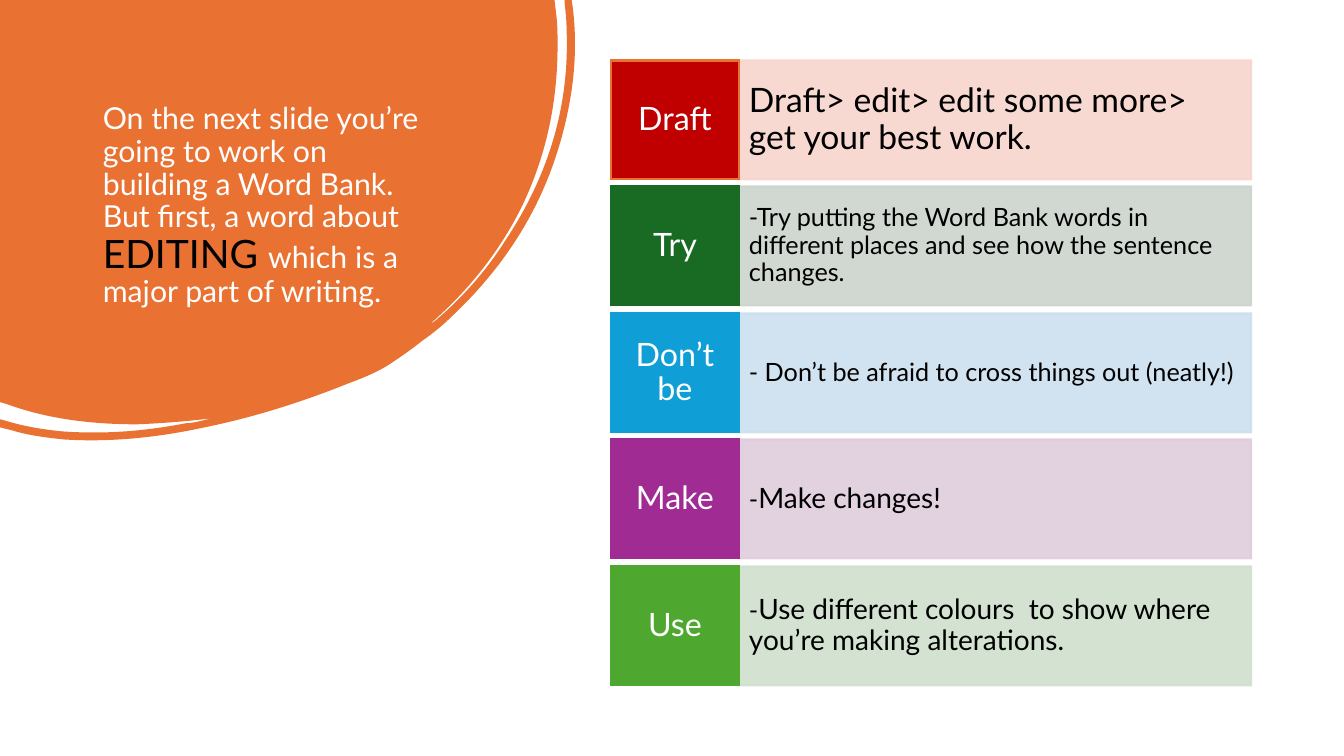
"""Builds the slide on editing: a curved title blob and five rows of advice."""
from lxml import etree
from pptx import Presentation
from pptx.dml.color import RGBColor
from pptx.enum.shapes import MSO_SHAPE
from pptx.enum.text import MSO_ANCHOR, MSO_AUTO_SIZE, PP_ALIGN
from pptx.oxml.ns import qn
from pptx.util import Pt

RECT = MSO_SHAPE.RECTANGLE
TOP, MIDDLE = MSO_ANCHOR.TOP, MSO_ANCHOR.MIDDLE
LEFT, CENTER = PP_ALIGN.LEFT, PP_ALIGN.CENTER
NO_FIT = MSO_AUTO_SIZE.NONE
PX = 9144
FONT = "Lato"

WHITE = RGBColor(255, 255, 255)
BLACK = RGBColor(0, 0, 0)
ORANGE = RGBColor(0xE9, 0x71, 0x32)
RED = RGBColor(0xC0, 0, 0)
ROSE = RGBColor(0xF7, 0xD5, 0xCE)
GREEN = RGBColor(0x19, 0x6B, 0x24)
SAGE = RGBColor(0xCC, 0xD4, 0xCD)
BLUE = RGBColor(0x0F, 0x9E, 0xD5)
SKY = RGBColor(0xCC, 0xDF, 0xEF)
PURPLE = RGBColor(0xA0, 0x2B, 0x93)
MAUVE = RGBColor(0xDF, 0xCD, 0xDC)
LIME = RGBColor(0x4E, 0xA7, 0x2E)
MINT = RGBColor(0xD0, 0xE1, 0xCD)

TITLE = [
    ("On the next slide you’re going to work on building a Word Bank.", 21.6, WHITE),
    None,
    ("But first, a word about ", 21.6, WHITE),
    ("EDITING ", 27.9, BLACK),
    ("which is a major part of writing.", 21.6, WHITE),
]
ROWS = [
    ("Draft", RED, ORANGE, ROSE,
     [("Draft> edit> edit some more> get your best work.", 24)]),
    ("Try", GREEN, GREEN, SAGE,
     [("-Try putting the Word Bank words in different places and see how "
       "the sentence changes.", 18)]),
    ("Don’t be", BLUE, BLUE, SKY,
     [("- Don’t be afraid to cross things out (neatly!)", 18)]),
    ("Make", PURPLE, PURPLE, MAUVE, [("-", 18), ("Make changes!", 20)]),
    ("Use", LIME, LIME, MINT,
     [("-", 18),
      ("Use different colours  to show where you’re making alterations.", 20)]),
]
# Two numbers end a line; six end a cubic curve.
BLOB = [
    (550, 0), (552, 17), (553, 26, 553, 36, 553, 45),
    (553, 101, 542, 154, 518, 204), (496, 249, 465, 288, 427, 321),
    (429, 321, 430, 319, 432, 318), (459, 295, 482, 269, 501, 239),
    (543, 176, 565, 107, 562, 30), (562, 21, 561, 12, 560, 3),
    (560, 0), (567, 0), (568, 7), (574, 54, 568, 102, 553, 150),
    (533, 214, 497, 268, 448, 314), (439, 323, 429, 331, 419, 338),
    (409, 346, 399, 353, 387, 361), (375, 369, 360, 375, 344, 381),
    (299, 399, 252, 414, 203, 424), (157, 434, 110, 439, 63, 436),
    (45, 434, 28, 432, 12, 427), (0, 424), (0, 416), (4, 417),
    (23, 423, 42, 426, 61, 428), (103, 431, 143, 428, 184, 420),
    (189, 420, 193, 419, 198, 418), (202, 417, 206, 416, 210, 415),
    (186, 418, 161, 420, 136, 421), (92, 421, 48, 416, 7, 401), (0, 399),
]


def bend(blob):
    lines = list(blob._element.spPr.iter(qn("a:lnTo")))
    for line, part in zip(lines, BLOB):
        if len(part) == 6:
            curve = etree.Element(qn("a:cubicBezTo"))
            for x, y in zip(part[::2], part[1::2]):
                point = etree.SubElement(curve, qn("a:pt"))
                point.set("x", str(x * PX))
                point.set("y", str(y * PX))
            line.getparent().replace(line, curve)


def add_blob(slide):
    pen = slide.shapes.build_freeform(0, 0, scale=1)
    pen.add_line_segments([(part[-2] * PX, part[-1] * PX) for part in BLOB])
    blob = pen.convert_to_shape()
    bend(blob)
    blob.shadow.inherit = False
    blob.fill.solid()
    blob.fill.fore_color.rgb = ORANGE
    blob.line.fill.background()
    slide.shapes.title._element.addprevious(blob._element)


def set_frame(frame, side, top, low, anchor):
    frame.word_wrap = True
    frame.auto_size = NO_FIT
    frame.vertical_anchor = anchor
    frame.margin_left = frame.margin_right = side * PX
    frame.margin_top, frame.margin_bottom = top * PX, low * PX


def add_title(slide):
    title = slide.shapes.title
    title.left, title.top, title.width, title.height = (
        v * PX for v in (92, 74, 352, 222))
    set_frame(title.text_frame, 10, 29, 5, TOP)
    para = title.text_frame.paragraphs[0]
    para.alignment, para.line_spacing = LEFT, 0.9
    para.font.name = FONT
    for part in TITLE:
        if part is None:
            para.add_line_break()
            continue
        run = para.add_run()
        run.text, size, color = part
        run.font.size = Pt(size)
        run.font.color.rgb = color


def add_cell(slide, box, fill, line, runs, color, align, side, edge):
    cell = slide.shapes.add_shape(RECT, *(v * PX for v in box))
    cell.shadow.inherit = False
    cell.fill.solid()
    cell.fill.fore_color.rgb = fill
    cell.line.color.rgb = line
    cell.line.width = Pt(1.5)
    edging = cell._element.spPr.find(qn("a:ln"))
    etree.SubElement(edging, qn("a:miter")).set("lim", "800000")
    set_frame(cell.text_frame, side, edge, edge, MIDDLE)
    para = cell.text_frame.paragraphs[0]
    para.alignment, para.line_spacing = align, 0.9
    para.font.name = FONT
    para.font.color.rgb = color
    if len(runs) == 1:
        para.font.size = Pt(runs[0][1])
    for text, size in runs:
        run = para.add_run()
        run.text = text
        if len(runs) > 1:
            run.font.size = Pt(size)
    return cell


def fade(cell):
    for tint in cell._element.spPr.iter(qn("a:srgbClr")):
        etree.SubElement(tint, qn("a:alpha")).set("val", "90000")


def main():
    deck = Presentation()
    deck.slide_width, deck.slide_height = 1333 * PX, 750 * PX
    slide = deck.slides.add_slide(deck.slide_layouts[5])
    add_blob(slide)
    add_title(slide)
    for i, (label, fill, line, pale, runs) in enumerate(ROWS):
        top = 60 + i * 251 // 2
        fade(add_cell(slide, (733, top, 508, 118), pale, pale, runs,
                      BLACK, LEFT, 10, 30))
        add_cell(slide, (606, top, 127, 118), fill, line, [(label, 23)],
                 WHITE, CENTER, 7, 12)
    deck.save("out.pptx")


if __name__ == "__main__":
    main()
